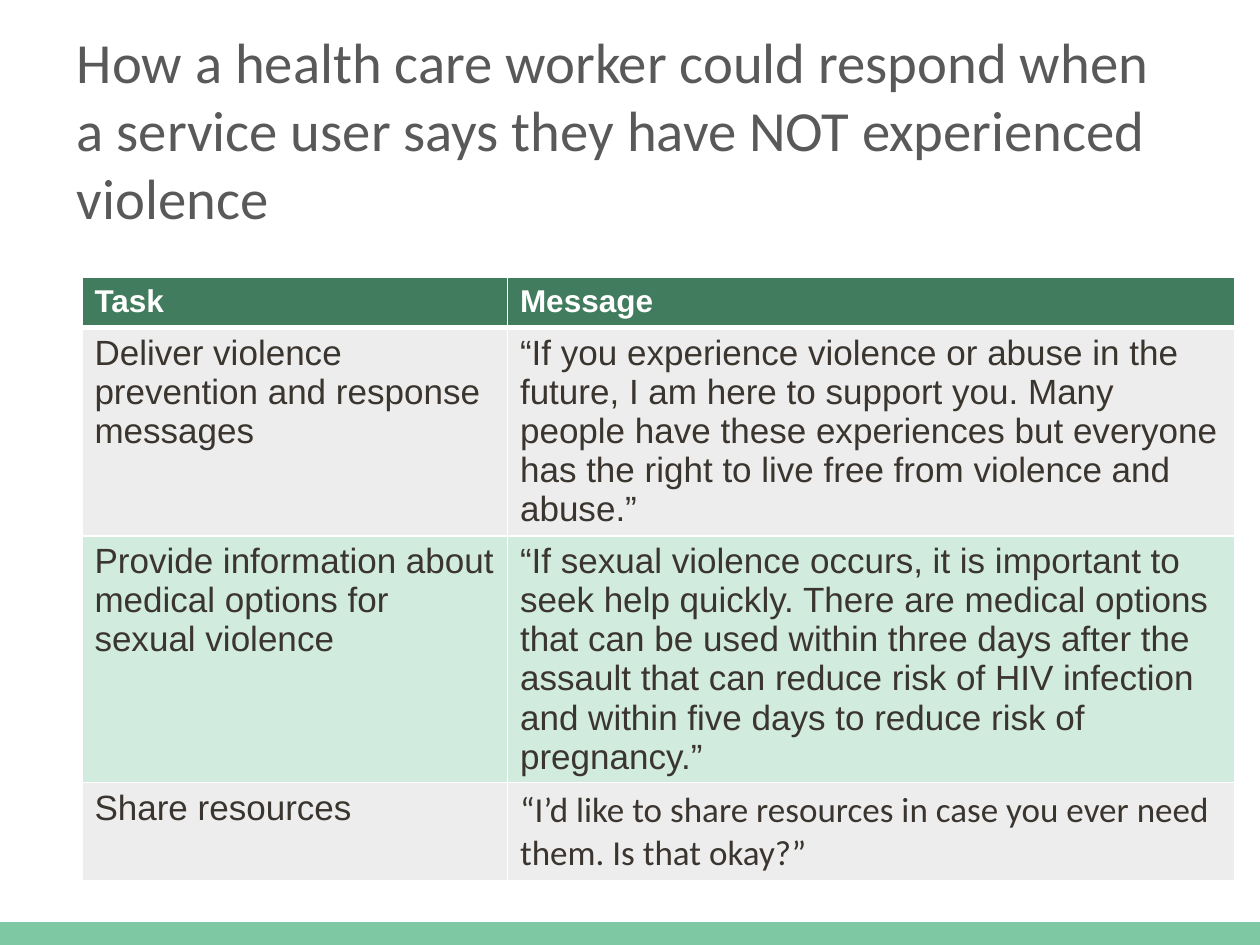
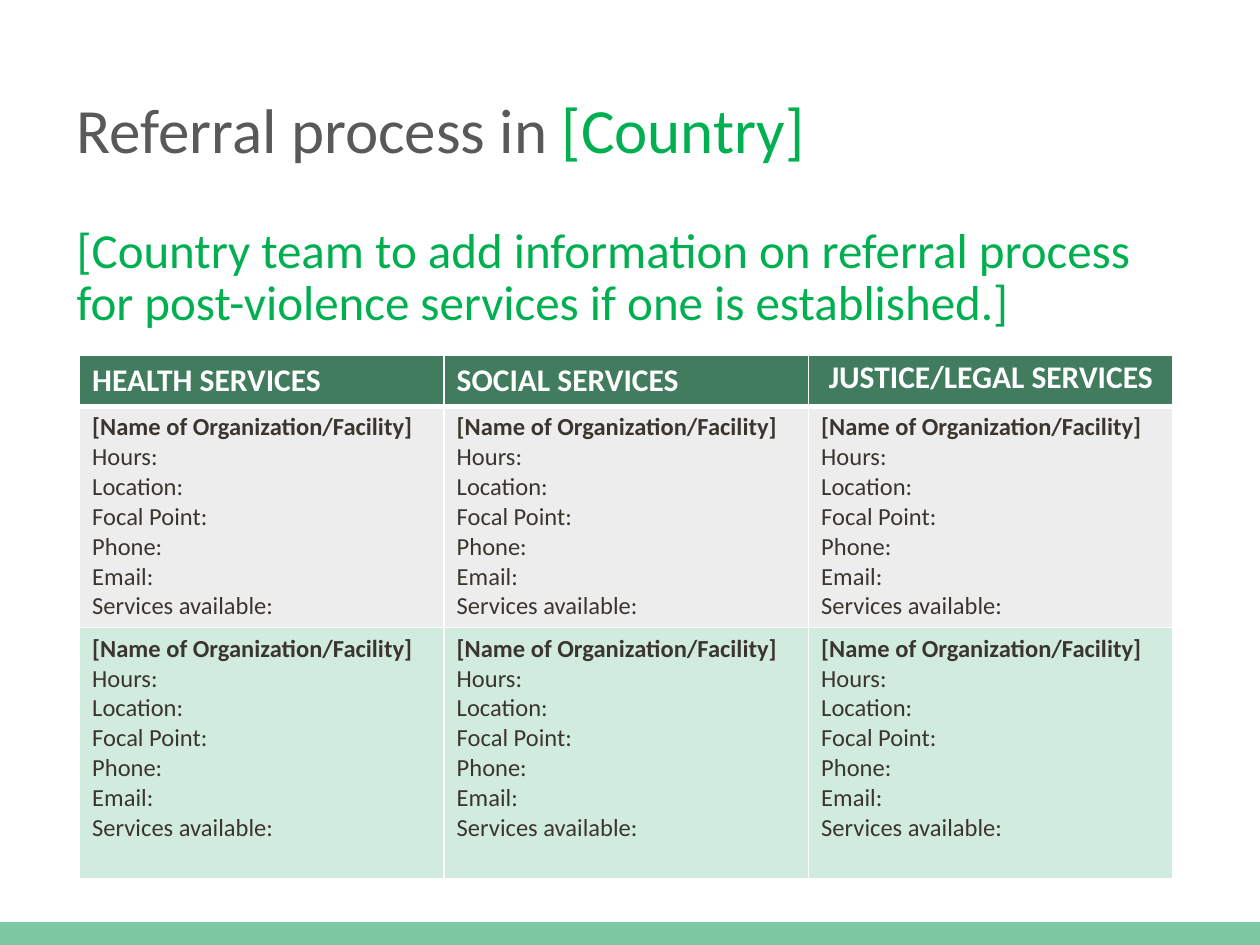
from dataclasses import dataclass

from pptx import Presentation
from pptx.dml.color import RGBColor as Rgb
from pptx.enum.shapes import MSO_SHAPE as Shape
from pptx.enum.text import MSO_ANCHOR as Anchor, MSO_AUTO_SIZE as AutoSize, PP_ALIGN as Align
from pptx.oxml.ns import qn
from pptx.util import Pt
from lxml.etree import SubElement


@dataclass(frozen=True)
class Theme:
    # Colours
    band: str = "7EC9A3"
    title: str = "595959"
    accent: str = "00B050"
    header: str = "427C5F"
    stripes: tuple = ("EDEDED", "D1EBDE")
    ink: str = "3B352F"
    white: str = "FFFFFF"
    # Fonts and sizes in points
    sans: str = "Calibri"
    table_sans: str = "Arial"
    title_size: float = 36
    long_title_size: float = 32.4
    prompt_size: float = 28
    header_size: float = 18
    message_size: float = 20
    detail_size: float = 14
    # Border widths in points
    rule: float = 1
    header_rule: float = 3


THEME = Theme()
SLIDE_WIDTH, SLIDE_HEIGHT = 720, 540
BAND_TOP = 527
TEXT_LEFT, TEXT_WIDTH = 36.72, 647.28


@dataclass(frozen=True)
class Span:
    text: str
    size: float
    colour: str = THEME.ink
    font: str = THEME.sans
    bold: bool = False


def add_span(para, span):
    run = para.add_run()
    run.text = span.text
    run.font.name = span.font
    run.font.size = Pt(span.size)
    run.font.bold = span.bold
    run.font.color.rgb = Rgb.from_string(span.colour)


def add_band(slide):
    band = slide.shapes.add_shape(
        Shape.RECTANGLE, 0, Pt(BAND_TOP), Pt(SLIDE_WIDTH), Pt(SLIDE_HEIGHT - BAND_TOP))
    band.shadow.inherit = False
    band.fill.solid()
    band.fill.fore_color.rgb = Rgb.from_string(THEME.band)
    band.line.fill.background()


def add_titled_slide(deck, title_spans):
    slide = deck.slides.add_slide(deck.slide_layouts[5])
    add_band(slide)
    title = slide.shapes.title
    title.left, title.top = Pt(TEXT_LEFT), Pt(35.28)
    title.width, title.height = Pt(TEXT_WIDTH), Pt(76.32)
    frame = title.text_frame
    frame.word_wrap = True
    frame.auto_size = AutoSize.NONE
    frame.vertical_anchor = Anchor.MIDDLE
    para = frame.paragraphs[0]
    para.alignment = Align.LEFT
    for span in title_spans:
        add_span(para, span)
    return slide


def add_prompt(slide, text):
    box = slide.shapes.add_textbox(Pt(TEXT_LEFT), Pt(125.28), Pt(TEXT_WIDTH), Pt(72))
    box.text_frame.word_wrap = True
    para = box.text_frame.paragraphs[0]
    para.line_spacing = Pt(30)
    para.space_before = Pt(12)
    add_span(para, Span(text, THEME.prompt_size, THEME.accent))


def set_borders(cell, top, bottom):
    properties = cell._tc.get_or_add_tcPr()
    sides = {"lnL": THEME.rule, "lnR": THEME.rule, "lnT": top, "lnB": bottom}
    for side, width in sides.items():
        line = SubElement(properties, qn(f"a:{side}"), w=str(Pt(width)))
        fill = SubElement(line, qn("a:solidFill"))
        SubElement(fill, qn("a:srgbClr"), val=THEME.white)


def fill_cell(cell, row_index, spans):
    """Style one cell and give each span its own paragraph."""
    set_borders(
        cell,
        top=THEME.header_rule if row_index == 1 else THEME.rule,
        bottom=THEME.header_rule if row_index == 0 else THEME.rule)
    # Body rows alternate between the two stripe colours
    colour = THEME.stripes[(row_index - 1) % 2] if row_index else THEME.header
    cell.fill.solid()
    cell.fill.fore_color.rgb = Rgb.from_string(colour)
    frame = cell.text_frame
    for index, span in enumerate(spans):
        para = frame.add_paragraph() if index else frame.paragraphs[0]
        add_span(para, span)


def add_striped_table(slide, left, top, widths, heights, rows):
    table = slide.shapes.add_table(
        len(heights), len(widths), Pt(left), Pt(top),
        Pt(sum(widths)), Pt(sum(heights))).table
    table.horz_banding = False
    for column, width in zip(table.columns, widths):
        column.width = Pt(width)
    for row_index, (row, height) in enumerate(zip(table.rows, heights)):
        row.height = Pt(height)
        for cell, spans in zip(row.cells, rows[row_index]):
            fill_cell(cell, row_index, spans)
    return table


def header_row(labels, font):
    return [[Span(label, THEME.header_size, THEME.white, font, True)] for label in labels]


def message_row(task, message, message_font=THEME.table_sans):
    return [[Span(task, THEME.message_size, font=THEME.table_sans)],
            [Span(message, THEME.message_size, font=message_font)]]


def build_response_slide(deck):
    slide = add_titled_slide(deck, [Span(
        "How a health care worker could respond when a service user says "
        "they have NOT experienced violence", THEME.long_title_size, THEME.title)])
    rows = [
        header_row(["Task", "Message"], THEME.table_sans),
        message_row(
            "Deliver violence prevention and response messages",
            "“If you experience violence or abuse in the future, I am here to support you. "
            "Many people have these experiences but everyone has the right to live free "
            "from violence and abuse.”"),
        message_row(
            "Provide information about medical options for sexual violence",
            "“If sexual violence occurs, it is important to seek help quickly. There are "
            "medical options that can be used within three days after the assault that can "
            "reduce risk of HIV infection and within five days to reduce risk of pregnancy.”"),
        message_row(
            "Share resources",
            "“I’d like to share resources in case you ever need them. Is that okay?”",
            THEME.sans),
    ]
    add_striped_table(slide, 46.8, 158.7, [243.2, 415.4], [28.5, 119, 141, 56], rows)


def build_referral_slide(deck):
    slide = add_titled_slide(deck, [
        Span("Referral process in ", THEME.title_size, THEME.title),
        Span("[Country]", THEME.title_size, THEME.accent)])
    add_prompt(slide, "[Country team to add information on referral process for "
                      "post-violence services if one is established.]")

    # Every facility cell holds the same blank form
    fields = ["Hours:", "Location:", "Focal Point:", "Phone:", "Email:", "Services available:"]
    facility = [Span("[Name of Organization/Facility]", THEME.detail_size, bold=True)]
    facility += [Span(field, THEME.detail_size) for field in fields]
    services = ["HEALTH SERVICES", "SOCIAL SERVICES", "JUSTICE/LEGAL SERVICES"]
    rows = [header_row(services, THEME.sans)] + [[facility] * len(services)] * 2
    table = add_striped_table(
        slide, 45.5, 203.2, [208.3] * len(services), [29, 126.5, 143.5], rows)

    # The longest heading is centred on a tighter line
    legal_heading = table.cell(0, 2).text_frame.paragraphs[0]
    legal_heading.alignment = Align.CENTER
    legal_heading.line_spacing = Pt(20)


def main():
    deck = Presentation()
    deck.slide_width, deck.slide_height = Pt(SLIDE_WIDTH), Pt(SLIDE_HEIGHT)
    build_response_slide(deck)
    build_referral_slide(deck)
    deck.save("out.pptx")


if __name__ == "__main__":
    main()
